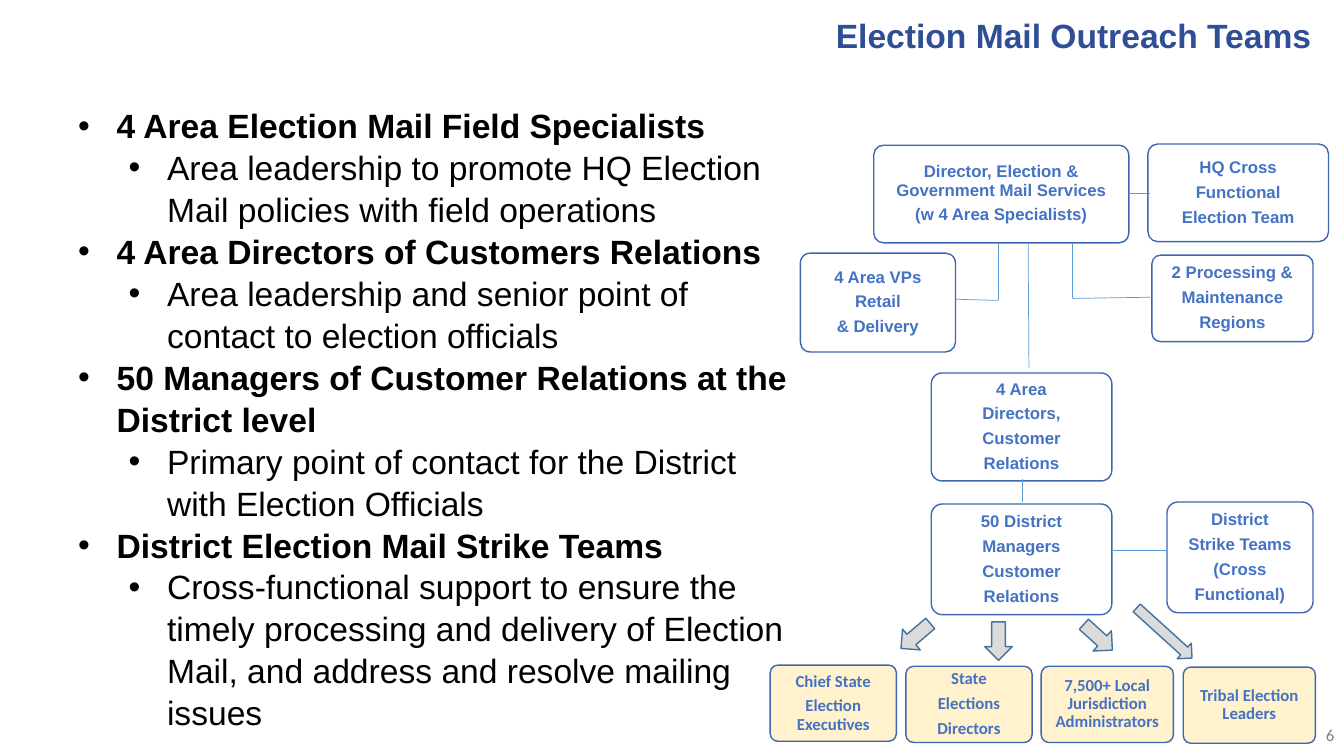
from lxml import etree
from pptx import Presentation
from pptx.dml.color import RGBColor
from pptx.enum.shapes import MSO_CONNECTOR, MSO_SHAPE
from pptx.enum.text import MSO_ANCHOR, PP_ALIGN
from pptx.oxml.ns import qn
from pptx.util import Cm, Pt

LINE = MSO_CONNECTOR.STRAIGHT
BOX, ARROW = MSO_SHAPE.ROUNDED_RECTANGLE, MSO_SHAPE.DOWN_ARROW
MIDDLE = MSO_ANCHOR.MIDDLE
CENTER, RIGHT = PP_ALIGN.CENTER, PP_ALIGN.RIGHT
COLORS = {
    "title": "304E96", "body": "000000", "number": "808080",
    "box_text": "4472C4", "box_line": "3E67B2", "team": "FFFFFF", "audience": "FFF2CC",
    "link": "5B9BD5", "arrow": "DBDBDB", "arrow_line": "43739E",
}


def add_text(p, text, color, size, bold=False, name="Arial", **layout):
    """Add one formatted run to p; layout holds paragraph attributes."""
    r = p.add_run()
    r.text = text
    for key, value in {"size": Pt(size), "bold": bold, "name": name}.items():
        setattr(r.font, key, value)
    r.font.color.rgb = RGBColor.from_string(COLORS[color])
    for key, value in layout.items():
        setattr(p, key, value)


def add_filled(kind, at, fill, line):
    """Add a flat shape with a 1 pt outline."""
    sp = s.shapes.add_shape(kind, *[Cm(v) for v in at])
    sp.shadow.inherit = False
    sp.fill.solid()
    sp.fill.fore_color.rgb = RGBColor.from_string(COLORS[fill])
    sp.line.color.rgb = RGBColor.from_string(COLORS[line])
    sp.line.width = Pt(1)
    return sp


prs = Presentation()
prs.slide_width, prs.slide_height = Cm(33.87), Cm(19.05)
s = prs.slides.add_slide(prs.slide_layouts[5])

# Title and slide number
title = s.shapes.title
title.left, title.top, title.width, title.height = Cm(8.28), Cm(0), Cm(25.02), Cm(1.9)
title.text_frame.vertical_anchor = MIDDLE
add_text(title.text_frame.paragraphs[0], "Election Mail Outreach Teams", "title", 24, True,
         alignment=RIGHT, line_spacing=0.9)
number = s.shapes.add_textbox(Cm(32.08), Cm(17.98), Cm(1.8), Cm(1.07))
number.text_frame.vertical_anchor = MIDDLE
add_text(number.text_frame.paragraphs[0], "6", "number", 12, name="Calibri", alignment=RIGHT)

# Roles and what each one does
roles = [
    ("4 Area Election Mail Field Specialists",
     "Area leadership to promote HQ Election Mail policies with field operations"),
    ("4 Area Directors of Customers Relations",
     "Area leadership and senior point of contact to election officials"),
    ("50 Managers of Customer Relations at the District level",
     "Primary point of contact for the District with Election Officials"),
    ("District Election Mail Strike Teams",
     "Cross-functional support to ensure the timely processing and delivery of Election Mail, "
     "and address and resolve mailing issues"),
]
tf = s.shapes.add_textbox(Cm(0.76), Cm(2.49), Cm(19.71), Cm(15.65)).text_frame
tf.word_wrap = True
for i, role in enumerate(roles):
    for level, text in enumerate(role):
        p = tf.paragraphs[0] if i == level == 0 else tf.add_paragraph()
        p.level = level
        pPr = p._p.get_or_add_pPr()
        pPr.set("marL", str(Cm(1.93 + 1.27 * level)))
        pPr.set("indent", str(Cm(-0.97)))
        etree.SubElement(pPr, qn("a:buFont"), typeface="Arial")
        etree.SubElement(pPr, qn("a:buChar"), char="•")
        add_text(p, text, "body", 24, level == 0, line_spacing=1.04)

# Organisation boxes: left, top, width, height, then one text per paragraph
teams = [
    ((22.02, 3.66, 6.43, 2.46),
     ["Director, Election & Government Mail Services", "(w 4 Area Specialists)"]),
    ((28.93, 3.63, 4.55, 2.46), ["HQ Cross", "Functional", "Election Team"]),
    ((20.17, 6.38, 3.91, 2.49), ["4 Area VPs", "Retail", "& Delivery"]),
    ((29.03, 6.43, 4.06, 2.18), ["2 Processing &", "Maintenance", "Regions"]),
    ((23.47, 9.4, 4.55, 2.72), ["4 Area", "Directors,", "Customer", "Relations"]),
    ((23.47, 12.7, 4.55, 2.79), ["50 District", "Managers", "Customer", "Relations"]),
    ((29.41, 12.65, 3.68, 2.79), ["District", "Strike Teams", "(Cross", "Functional)"]),
]
audiences = [
    ((19.41, 16.76, 3.18, 1.92), ["Chief State", "Election Executives"]),
    ((22.83, 16.79, 3.18, 1.92), ["State", "Elections", "Directors"]),
    ((26.24, 16.79, 3.33, 1.92), ["7,500+ Local Jurisdiction Administrators"]),
    ((29.82, 16.81, 3.33, 1.92), ["Tribal Election Leaders"]),
]
for group, fill, font in ((teams, "team", "Arial"), (audiences, "audience", "Calibri")):
    for at, lines in group:
        sp = add_filled(BOX, at, fill, "box_line")
        sp.adjustments[0] = 0.1
        tf = sp.text_frame
        tf.word_wrap, tf.vertical_anchor = True, MIDDLE
        for side in ("left", "top", "right", "bottom"):
            setattr(tf, f"margin_{side}", Cm(0.15))
        for i, text in enumerate(lines):
            p = tf.add_paragraph() if i else tf.paragraphs[0]
            add_text(p, text, "box_text", 12, True, font,
                     alignment=CENTER, line_spacing=0.9, space_after=Pt(4.8))

# Links between the boxes
links = [
    (25.91, 6.12, 25.93, 9.27), (28.45, 4.88, 28.98, 4.88),
    (25.15, 6.15, 25.15, 7.57), (24.08, 7.54, 25.15, 7.57),
    (27.03, 6.15, 27.03, 7.52), (27.03, 7.52, 28.98, 7.49),
    (25.76, 12.07, 25.76, 12.65), (29.41, 13.87, 28.04, 13.87),
]
for ends in links:
    link = s.shapes.add_connector(LINE, *[Cm(v) for v in ends])
    link.line.color.rgb = RGBColor.from_string(COLORS["link"])
    link.line.width = Pt(0.5)
    etree.SubElement(link._element.spPr, qn("a:effectLst"))

# Arrows down to the audiences
arrows = [
    ((22.73, 15.54, 0.69, 0.97), 49.6),
    ((24.82, 15.67, 0.69, 0.97), 0),
    ((27.33, 15.57, 0.69, 0.97), 312.2),
    ((29.08, 15.01, 0.53, 1.88), 312.2),
]
for at, angle in arrows:
    add_filled(ARROW, at, "arrow", "arrow_line").rotation = angle

prs.save("out.pptx")
